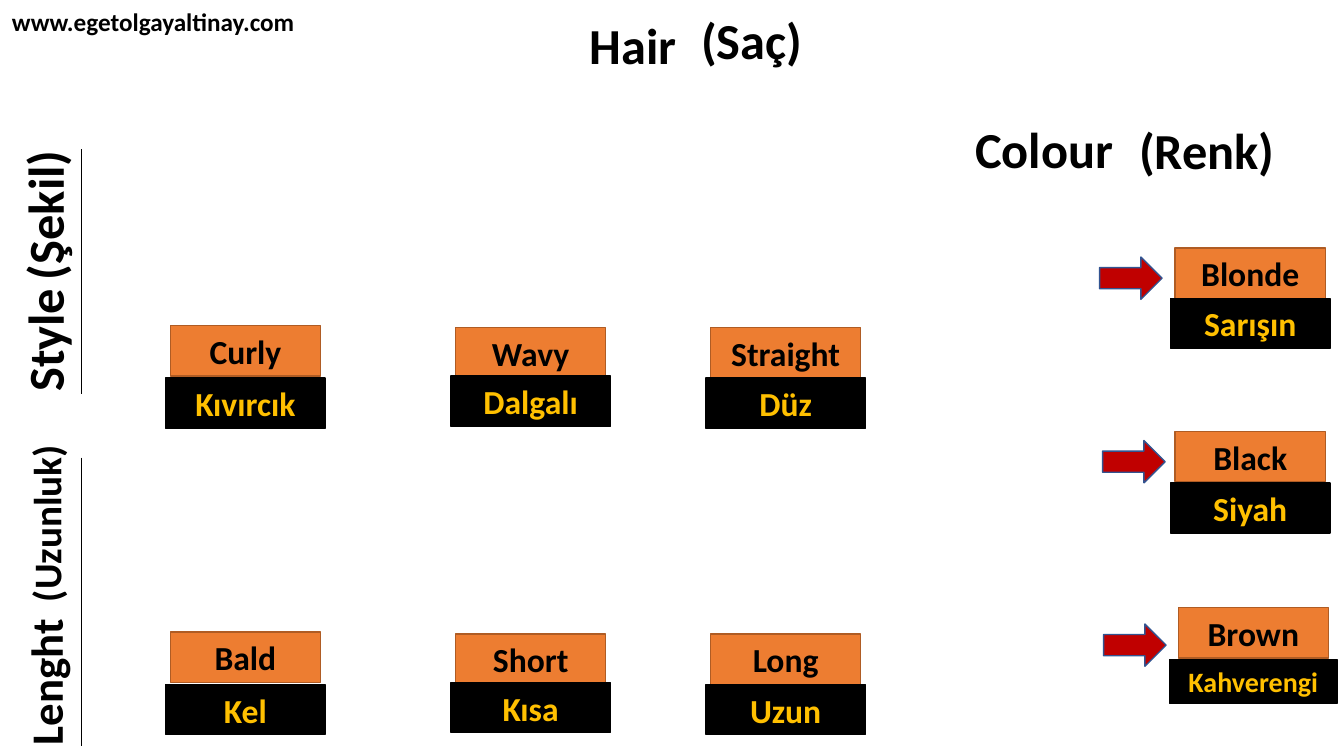
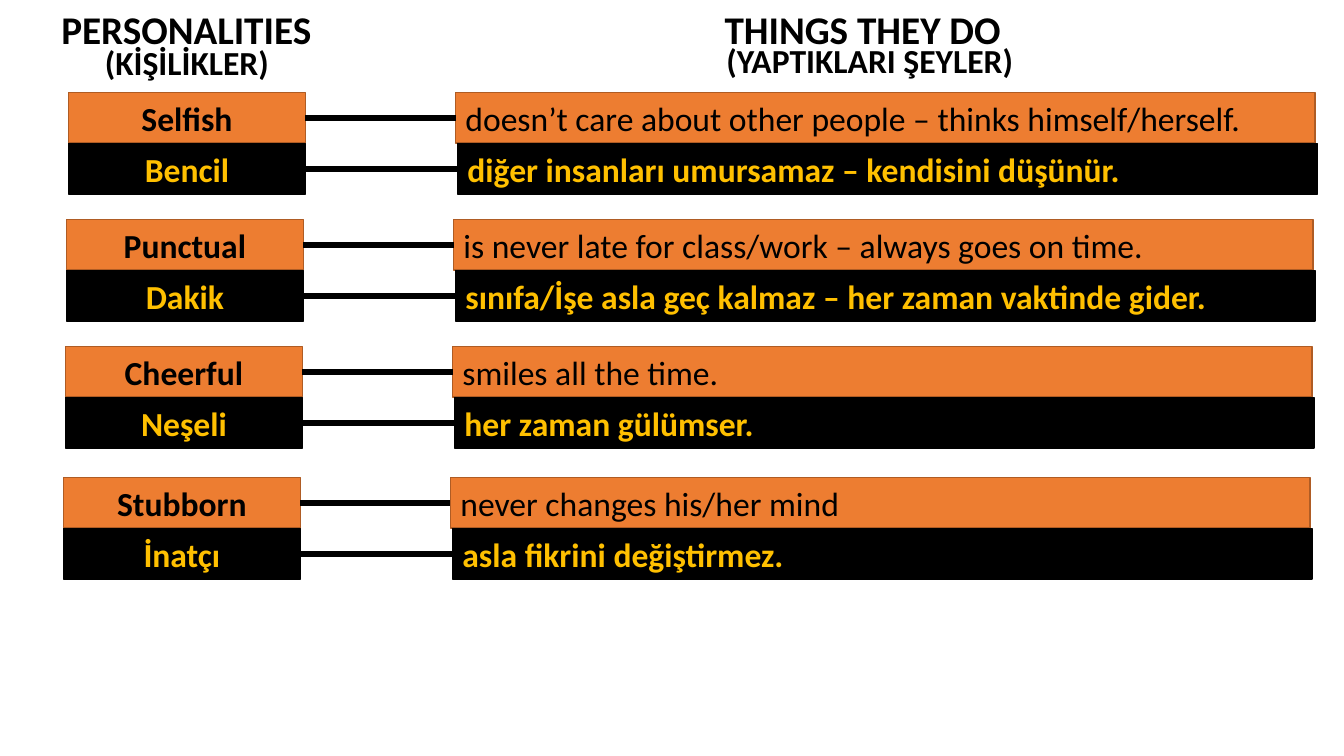
"""Build two bilingual vocabulary slides: hair words and personalities."""
from itertools import product
from typing import NamedTuple

from lxml.etree import SubElement
from pptx import Presentation
from pptx.dml.color import RGBColor
from pptx.enum.shapes import MSO_CONNECTOR as LINE, MSO_SHAPE as SHAPE
from pptx.enum.text import MSO_ANCHOR as ANCHOR, MSO_AUTO_SIZE as FIT, PP_ALIGN as ALIGN
from pptx.oxml.ns import qn
from pptx.util import Inches, Pt

CELL = 0.5
COLS, ROWS = 26.67, 15
FONT = "Calibri"
BLACK = RGBColor(0x00, 0x00, 0x00)
ORANGE = RGBColor(0xED, 0x7D, 0x31)
RUST = RGBColor(0xAF, 0x5C, 0x24)
GOLD = RGBColor(0xFF, 0xC0, 0x00)
RED = RGBColor(0xC0, 0x00, 0x00)
BLUE = RGBColor(0x32, 0x54, 0x91)
CARD_W = 2.98
NAME_W, DEED_W, DEED_DX = 4.7, 17.06, 7.68


class Box(NamedTuple):
    """Frame measured in grid columns and rows."""
    col: float
    row: float
    w: float
    h: float = 1


class Look(NamedTuple):
    """Fill, outline and text colour of a box."""
    fill: RGBColor
    line: RGBColor
    text: RGBColor = BLACK


class Label(NamedTuple):
    """Free text in a frame."""
    text: str
    box: Box
    size: float = 36
    align: ALIGN = ALIGN.CENTER
    turn: float = 0


class Card(NamedTuple):
    """English word above its Turkish meaning."""
    english: str
    turkish: str
    col: float
    row: float
    drop: float = 1
    w: float = 3.16
    h: float = 1
    size: float = 24


class Trait(NamedTuple):
    """Personality and what it does, in both languages."""
    col: float
    row: float
    names: tuple[str, str]
    deeds: tuple[str, str]


ENGLISH = Look(ORANGE, RUST)
TURKISH = Look(BLACK, BLACK, GOLD)
ARROW = Look(RED, BLUE)

HAIR_LABELS = (
    Label("Hair", Box(7.7, 0.18, 9.72, 1.42)),
    Label("(Saç)", Box(10.06, 0.08, 9.72, 1.42)),
    Label("Style", Box(-0.76, 6.02, 3.32, 1.46), turn=270),
    Label("(Şekil)", Box(-0.76, 3.54, 3.32, 1.46), turn=270),
    Label("Lenght", Box(-0.76, 12.9, 3.32, 1.28), 32, turn=270),
    Label("(Uzunluk)", Box(-1.08, 9.82, 3.98, 1.14), 28, turn=270),
    Label("Colour", Box(18.54, 2.24, 4.36, 1.42)),
    Label("(Renk)", Box(22.06, 2.26, 3.78, 1.42)),
    Label("www.egetolgayaltinay.com", Box(-2.46, 0.02, 11, 0.8), 18),
)
TRAIT_LABELS = (
    Label("PERSONALITIES", Box(1.02, 0, 6.18, 1.14), 28, ALIGN.LEFT),
    Label("THINGS THEY DO", Box(14.18, 0, 6.18, 1.14), 28, ALIGN.LEFT),
    Label("(KİŞİLİKLER)", Box(0.62, 0.74, 6.18)),
    Label("(YAPTIKLARI ŞEYLER)", Box(13.74, 0.7, 7.04)),
)
TRAIT_LABELS = TRAIT_LABELS[:2] + tuple(l._replace(size=24) for l in TRAIT_LABELS[2:])
RULES = ((2.96, 7.82), (9.08, 14.8))
HAIR_ROWS = (6.46, 12.54)
HAIR_COLS = ((3.38, 0, 1.04), (9.04, 0.04, 0.96), (14.1, 0.04, 1))
HAIR_WORDS = (
    ("Curly", "Kıvırcık"), ("Wavy", "Dalgalı"), ("Straight", "Düz"),
    ("Bald", "Kel"), ("Short", "Kısa"), ("Long", "Uzun"),
)
COLOUR_CARDS = (
    Card("Blonde", "Sarışın", 23.32, 4.92),
    Card("Black", "Siyah", 23.32, 8.56, 1.02),
    Card("Brown", "Kahverengi", 23.38, 12.06, 1.02, 3.32, 0.88, 20),
)
ARROW_COLS, ARROW_ROW, ARROW_STEP = (21.82, 21.88, 21.9), 5.1, 3.64
TRAITS = (
    Trait(1.36, 1.84, ("Selfish", "Bencil"),
          ("doesn’t care about other people – thinks himself/herself.",
           "diğer insanları umursamaz – kendisini düşünür.")),
    Trait(1.32, 4.36, ("Punctual", "Dakik"),
          ("is never late for class/work – always goes on time.",
           "sınıfa/İşe asla geç kalmaz – her zaman vaktinde gider.")),
    Trait(1.3, 6.88, ("Cheerful", "Neşeli"),
          ("smiles all the time.", "her zaman gülümser.")),
    Trait(1.26, 9.48, ("Stubborn", "İnatçı"),
          ("never changes his/her mind", "asla fikrini değiştirmez.")),
)


def grid(*cells: float) -> list[int]:
    """Turn grid cells into lengths."""
    return [Inches(n * CELL) for n in cells]


def write(sp, text: str, size: float, color: RGBColor, align: ALIGN,
          anchor: ANCHOR, bold: bool = True) -> None:
    """Put one formatted run in a shape."""
    tf = sp.text_frame
    frame = {"word_wrap": True, "auto_size": FIT.SHAPE_TO_FIT_TEXT, "vertical_anchor": anchor}
    p = tf.paragraphs[0]
    p.alignment = align
    r = p.add_run()
    r.text = text
    font = {"name": FONT, "size": Pt(size), "bold": bold}
    for target, values in ((tf, frame), (r.font, font)):
        for key, value in values.items():
            setattr(target, key, value)
    r.font.color.rgb = color


def add_label(s, label: Label) -> None:
    """Draw free text."""
    sp = s.shapes.add_textbox(*grid(*label.box))
    write(sp, label.text, label.size, BLACK, label.align, ANCHOR.TOP)
    sp.rotation = label.turn


def add_box(s, box: Box, look: Look, kind: SHAPE = SHAPE.RECTANGLE):
    """Draw a filled shape."""
    sp = s.shapes.add_shape(kind, *grid(*box))
    sp.shadow.inherit = False
    sp.fill.solid()
    sp.fill.fore_color.rgb = look.fill
    sp.line.color.rgb = look.line
    sp.line.width = Pt(1)
    return sp


def add_word(s, text: str, box: Box, look: Look, size: float = 24,
             align: ALIGN = ALIGN.CENTER, bold: bool = True):
    """Draw a filled box with text."""
    sp = add_box(s, box, look)
    write(sp, text, size, look.text, align, ANCHOR.MIDDLE, bold)
    return sp


def add_line(s, width: float, x1: float = 0, y1: float = 0, x2: float = 0, y2: float = 0):
    """Draw a plain black line."""
    line = s.shapes.add_connector(LINE.STRAIGHT, *grid(x1, y1, x2, y2))
    line.line.color.rgb = BLACK
    line.line.width = Pt(width)
    SubElement(line._element.spPr, qn("a:effectLst"))
    return line


def add_card(s, card: Card) -> None:
    """Draw a word with its wider meaning centred below."""
    add_word(s, card.english, Box(card.col, card.row, CARD_W), ENGLISH)
    below = Box(card.col - (card.w - CARD_W) / 2, card.row + card.drop, card.w, card.h)
    add_word(s, card.turkish, below, TURKISH, card.size)


def add_trait(s, trait: Trait) -> None:
    """Draw a personality joined to its deed in each language."""
    for i, look in enumerate((ENGLISH, TURKISH)):
        row = trait.row + i * 1.01
        name = add_word(s, trait.names[i], Box(trait.col, row, NAME_W), look)
        deed_box = Box(trait.col + DEED_DX + i * 0.04, row, DEED_W)
        deed = add_word(s, trait.deeds[i], deed_box, look, align=ALIGN.LEFT, bold=i == 1)
        line = add_line(s, 4.5)
        line.begin_connect(name, 3)
        line.end_connect(deed, 1)


def build_hair(s) -> None:
    """Fill the hair slide."""
    for label in HAIR_LABELS:
        add_label(s, label)
    for top, bottom in RULES:
        add_line(s, 0.5, 1.62, top, 1.62, bottom)
    for words, (row, (col, shift, drop)) in zip(HAIR_WORDS, product(HAIR_ROWS, HAIR_COLS)):
        add_card(s, Card(*words, col, row + shift, drop))
    for i, (col, card) in enumerate(zip(ARROW_COLS, COLOUR_CARDS)):
        add_box(s, Box(col, ARROW_ROW + i * ARROW_STEP, 1.24, 0.84), ARROW, SHAPE.RIGHT_ARROW)
        add_card(s, card)


def build_traits(s) -> None:
    """Fill the personalities slide."""
    for label in TRAIT_LABELS:
        add_label(s, label)
    for trait in TRAITS:
        add_trait(s, trait)


def main() -> None:
    """Build and save the presentation."""
    prs = Presentation()
    prs.slide_width, prs.slide_height = grid(COLS, ROWS)
    for build in (build_hair, build_traits):
        build(prs.slides.add_slide(prs.slide_layouts[6]))
    prs.save("out.pptx")


if __name__ == "__main__":
    main()
